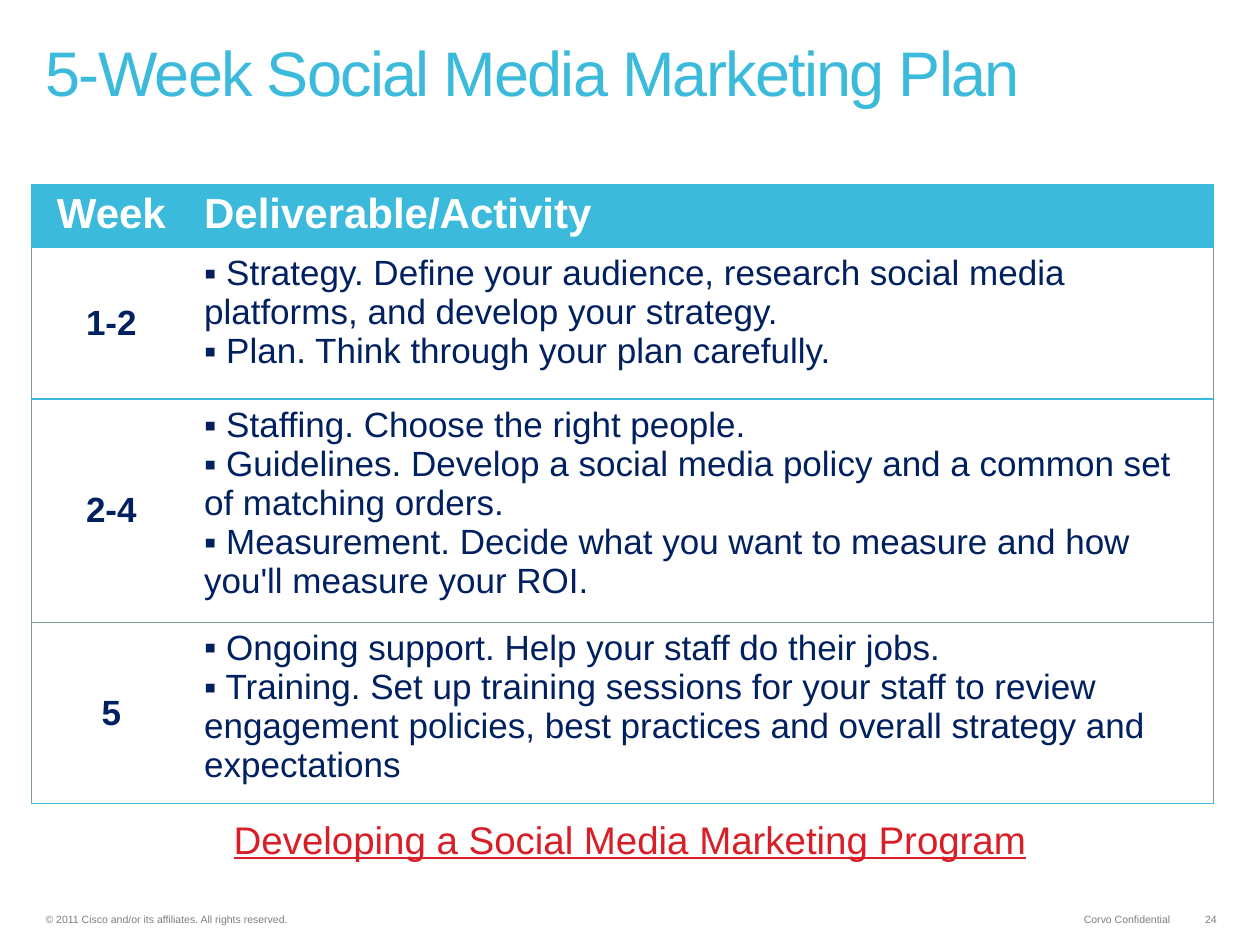
from lxml.etree import SubElement
from pptx import Presentation
from pptx.dml.color import RGBColor
from pptx.enum.text import MSO_ANCHOR, PP_ALIGN
from pptx.oxml.ns import qn
from pptx.util import Cm, Pt

SKY, NAVY, RED, GREY, RULE, WHITE = (
    "3CBADC", "002060", "D81F28", "7F7F7F", "7F9A9F", "FFFFFF")
COLUMN_WIDTHS = (3.23, 20.6)
ROW_HEIGHTS = (1.27, 3.06, 4.46, 3.66)
HEADINGS = ("Week", "Deliverable/Activity")
PLAN = (
    ("1-2", ("Strategy. Define your audience, research social media platforms, "
             "and develop your strategy.",
             "Plan. Think through your plan carefully.")),
    ("2-4", ("Staffing. Choose the right people.",
             "Guidelines. Develop a social media policy and a common set of "
             "matching orders.",
             "Measurement. Decide what you want to measure and how you'll "
             "measure your ROI.")),
    ("5", ("Ongoing support. Help your staff do their jobs.",
           "Training. Set up training sessions for your staff to review "
           "engagement policies, best practices and overall strategy and "
           "expectations")),
)


def rgb(value):
    return RGBColor.from_string(value)


def add_run(p, text, size, color, bold=False):
    r = p.add_run()
    r.text = text
    r.font.name = "Arial"
    r.font.size = Pt(size)
    r.font.bold = bold
    r.font.color.rgb = rgb(color)
    return r


def add_text(s, box, text, size, color, align=PP_ALIGN.LEFT,
             anchor=MSO_ANCHOR.TOP):
    """Add a one-paragraph text box and return its paragraph and run."""
    tf = s.shapes.add_textbox(*(Cm(v) for v in box)).text_frame
    tf.word_wrap = True
    tf.vertical_anchor = anchor
    p = tf.paragraphs[0]
    p.alignment = align
    return p, add_run(p, text, size, color)


def set_borders(cell, **sides):
    """Draw cell sides, each a (colour, points) pair or None for no line."""
    tcPr = cell._tc.get_or_add_tcPr()
    for index, side in enumerate(("L", "R", "T", "B")):
        ln = tcPr.makeelement(qn(f"a:ln{side}"), {})
        if sides[side]:
            color, width = sides[side]
            ln.set("w", str(Pt(width)))
            fill = SubElement(ln, qn("a:solidFill"))
            SubElement(fill, qn("a:srgbClr"), val=color)
        else:
            SubElement(ln, qn("a:noFill"))
        tcPr.insert(index, ln)


def fill_cell(cell, lines, size, color, bold=False, center=False, bullet=False):
    tf = cell.text_frame
    for i, line in enumerate(lines):
        p = tf.add_paragraph() if i else tf.paragraphs[0]
        p.alignment = PP_ALIGN.CENTER if center else PP_ALIGN.LEFT
        if bullet:
            pPr = p._p.get_or_add_pPr()
            pPr.set("marL", "0")
            pPr.set("indent", "0")
            SubElement(pPr, qn("a:buFont"), typeface="Arial")
            SubElement(pPr, qn("a:buChar"), char="▪")
            line = " " + line
        add_run(p, line, size, color, bold)


def add_plan_table(s):
    frame = s.shapes.add_table(
        len(ROW_HEIGHTS), len(COLUMN_WIDTHS), Cm(0.63), Cm(3.72),
        Cm(sum(COLUMN_WIDTHS)), Cm(sum(ROW_HEIGHTS)))
    table = frame.table
    for column, width in zip(table.columns, COLUMN_WIDTHS):
        column.width = Cm(width)
    for row, height in zip(table.rows, ROW_HEIGHTS):
        row.height = Cm(height)

    for c, heading in enumerate(HEADINGS):
        fill_cell(table.cell(0, c), [heading], 24, WHITE, bold=True, center=c == 0)
    for r, (week, activities) in enumerate(PLAN, start=1):
        week_cell = table.cell(r, 0)
        week_cell.vertical_anchor = MSO_ANCHOR.MIDDLE
        fill_cell(week_cell, [week], 20, NAVY, bold=True, center=True)
        fill_cell(table.cell(r, 1), activities, 20, NAVY, bullet=True)

    blue, strong, thin = (SKY, 0.75), (SKY, 1.25), (RULE, 0.5)
    levels = (blue, blue, strong, thin, blue)
    for r in range(len(ROW_HEIGHTS)):
        edge = thin if r else blue
        for c in range(len(COLUMN_WIDTHS)):
            cell = table.cell(r, c)
            cell.fill.solid()
            cell.fill.fore_color.rgb = rgb(WHITE if r else SKY)
            set_borders(cell, L=None if c else edge, R=edge if c else None,
                        T=levels[r], B=levels[r + 1])


def add_footer(s):
    top, height = 18.31, 0.48
    items = (
        (0.67, 9.5, "© 2011 Cisco and/or its affiliates. All rights reserved.",
         PP_ALIGN.LEFT),
        (20.84, 3, "Corvo Confidential", PP_ALIGN.RIGHT),
        (23.78, 1, "24", PP_ALIGN.RIGHT),
    )
    for left, width, text, align in items:
        add_text(s, (left, top, width, height), text, 6, GREY, align,
                 MSO_ANCHOR.BOTTOM)


def main():
    prs = Presentation()
    prs.slide_width, prs.slide_height = Cm(25.4), Cm(19.05)
    s = prs.slides.add_slide(prs.slide_layouts[6])
    add_footer(s)
    add_plan_table(s)
    p, r = add_text(s, (0.67, 0.84, 23.8, 2.34),
                    "5-Week Social Media Marketing Plan", 36, SKY)
    p.line_spacing = 0.8
    r.font._element.set("spc", "-100")
    p, r = add_text(s, (0, 16.32, 25.4, 1.19),
                    "Developing a Social Media Marketing Program", 22, RED,
                    PP_ALIGN.CENTER)
    r.font.underline = True
    prs.save("out.pptx")


if __name__ == "__main__":
    main()
